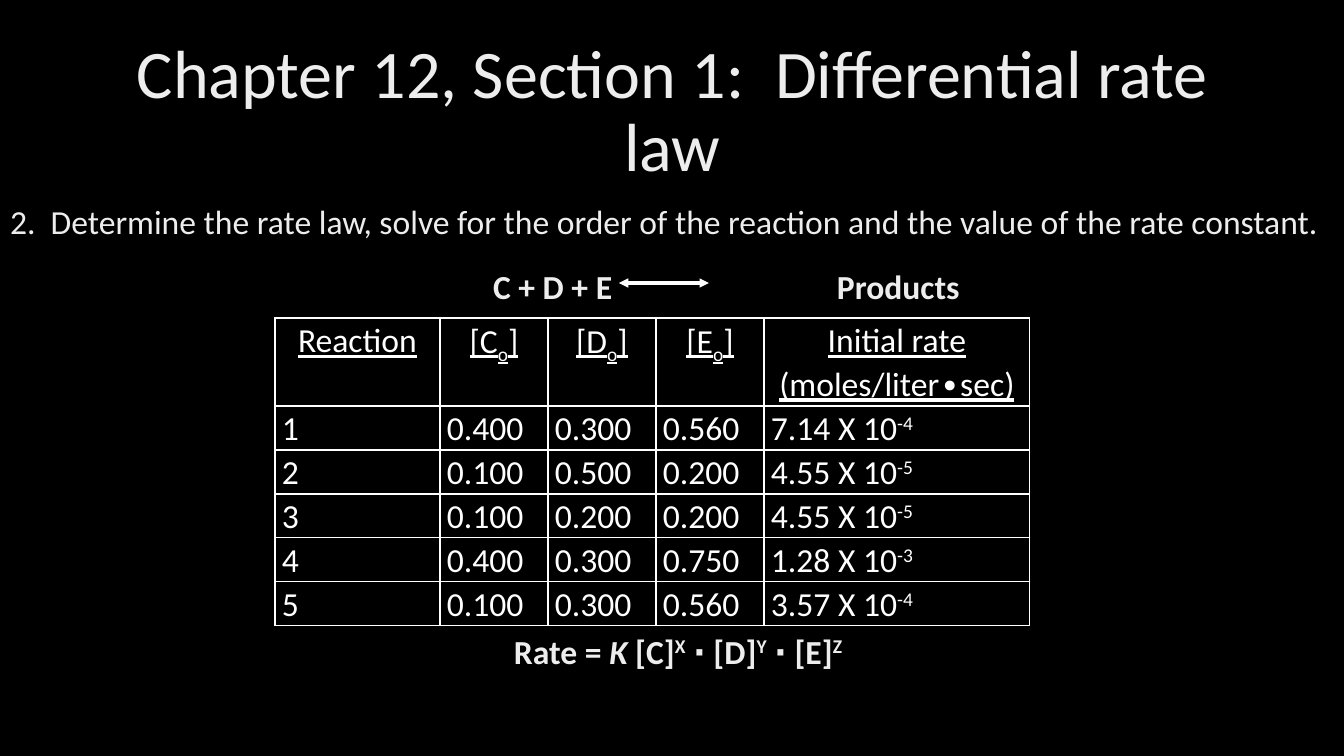
"""Build a chemistry slide about the differential rate law."""
from lxml.etree import SubElement
from pptx import Presentation
from pptx.dml.color import RGBColor
from pptx.enum.shapes import MSO_CONNECTOR
from pptx.enum.text import MSO_ANCHOR, PP_ALIGN
from pptx.oxml import parse_xml
from pptx.oxml.ns import nsdecls, qn
from pptx.util import Emu, Pt

TITLE = [("Chapter 12, Section 1:  Differential rate law", "")]
QUESTION = [("2.  Determine the rate law, solve for the order of the reaction "
             "and the value of the rate constant.", "")]
EQUATION = [("C + D + E\tProducts", "")]
RATE_LAW = [("Rate = ", ""), ("K", "italic"), (" [C]", ""), ("X", "super"),
            (" ∙ [D]", ""), ("Y", "super"), (" ∙ [E]", ""), ("Z", "super")]
HEADINGS = [
    [("Reaction", "")],
    *[[(f"[{reactant}", ""), ("o", "sub"), ("]", "")] for reactant in "CDE"],
    [("Initial rate (moles/liter∙sec)", "")],
]
TRIALS = [
    ("0.400", "0.300", "0.560", "7.14", "-4"),
    ("0.100", "0.500", "0.200", "4.55", "-5"),
    ("0.100", "0.200", "0.200", "4.55", "-5"),
    ("0.400", "0.300", "0.750", "1.28", "-3"),
    ("0.100", "0.300", "0.560", "3.57", "-4"),
]

BLACK = RGBColor(0x00, 0x00, 0x00)
WHITE = RGBColor(0xFF, 0xFF, 0xFF)
PALE = RGBColor(0xED, 0xED, 0xED)
FONT = "Calibri"
BASELINES = {"super": "30000", "sub": "-25000"}

WIDTH, HEIGHT = 1344, 756
TABLE_LEFT, TABLE_TOP = 275, 318
COLUMNS = [165, 108, 108, 108, 266]
ROW, HEADING_ROW = 44, 88
INSET_X, INSET_Y, CELL_INSET = 10, 5, 7
LINE_BOX = 46
PRODUCTS_TAB = 344


def px(length):
    return Emu(round(length * 914400 / 100.8))


def write(paragraph, runs, size, color, spacing, align, bold=False, underline=False):
    paragraph.alignment = align
    paragraph.line_spacing = spacing
    for text, style in runs:
        run = paragraph.add_run()
        run.text = text
        font = run.font
        font.name, font.size, font.bold = FONT, Pt(size), bold
        font.italic = style == "italic"
        font.underline = underline
        font.color.rgb = color
        if style in BASELINES:
            font._element.set("baseline", BASELINES[style])


def add_text(slide, box, runs, size=24, align=PP_ALIGN.LEFT, anchor=MSO_ANCHOR.TOP,
             bold=False, tab=None):
    frame = slide.shapes.add_textbox(*map(px, box)).text_frame
    frame.word_wrap = True
    frame.vertical_anchor = anchor
    frame.margin_left = frame.margin_right = px(INSET_X)
    frame.margin_top = frame.margin_bottom = px(INSET_Y)
    paragraph = frame.paragraphs[0]
    if tab:
        stops = SubElement(paragraph._p.get_or_add_pPr(), qn("a:tabLst"))
        SubElement(stops, qn("a:tab"), pos=str(px(tab)), algn="l")
    write(paragraph, runs, size, PALE, 0.9, align, bold)


def style_cell(cell):
    cell.margin_left = cell.margin_right = px(CELL_INSET)
    cell.margin_top = cell.margin_bottom = 0
    properties = cell._tc.get_or_add_tcPr()
    for side in ("lnL", "lnR", "lnT", "lnB"):
        properties.append(parse_xml(
            f'<a:{side} {nsdecls("a")} w="{Pt(1)}"><a:solidFill>'
            f'<a:srgbClr val="{WHITE}"/></a:solidFill></a:{side}>'))
    cell.fill.solid()
    cell.fill.fore_color.rgb = BLACK


def add_trials(slide):
    rows = [HEADINGS]
    for number, (*concentrations, rate, power) in enumerate(TRIALS, 1):
        plain = [[(value, "")] for value in (str(number), *concentrations)]
        rows.append(plain + [[(f"{rate} X 10", ""), (power, "super")]])
    heights = [HEADING_ROW] + [ROW] * len(TRIALS)
    table = slide.shapes.add_table(
        len(rows), len(COLUMNS), px(TABLE_LEFT), px(TABLE_TOP),
        px(sum(COLUMNS)), px(sum(heights))).table
    table.horz_banding = False
    for column, width in zip(table.columns, COLUMNS):
        column.width = px(width)
    for index, (row, height) in enumerate(zip(rows, heights)):
        table.rows[index].height = px(height)
        heading = index == 0
        align = PP_ALIGN.CENTER if heading else PP_ALIGN.LEFT
        for column, runs in enumerate(row):
            cell = table.cell(index, column)
            style_cell(cell)
            write(cell.text_frame.paragraphs[0], runs, 24, WHITE, 1.07, align,
                  underline=heading)


def add_arrow(slide, left, right, y):
    arrow = slide.shapes.add_connector(
        MSO_CONNECTOR.STRAIGHT, px(left), px(y), px(right), px(y))
    arrow.line.color.rgb = WHITE
    arrow.line.width = Pt(2.25)
    line = arrow.line._get_or_add_ln()
    for end in ("a:headEnd", "a:tailEnd"):
        SubElement(line, qn(end), type="triangle")
    SubElement(arrow._element.spPr, qn("a:effectLst"))


def main():
    deck = Presentation()
    deck.slide_width, deck.slide_height = px(WIDTH), px(HEIGHT)
    slide = deck.slides.add_slide(deck.slide_layouts[6])
    slide.background.fill.solid()
    slide.background.fill.fore_color.rgb = BLACK
    add_text(slide, (93, 40, 1159, 146), TITLE, 48.6, PP_ALIGN.CENTER, MSO_ANCHOR.MIDDLE)
    add_text(slide, (0, 200, WIDTH, LINE_BOX), QUESTION)
    add_text(slide, (483, 265, 560, LINE_BOX), EQUATION, bold=True, tab=PRODUCTS_TAB)
    add_arrow(slide, 619, 709, 283)
    add_trials(slide)
    add_text(slide, (504, 630, 400, LINE_BOX), RATE_LAW, bold=True)
    deck.save("out.pptx")


if __name__ == "__main__":
    main()
